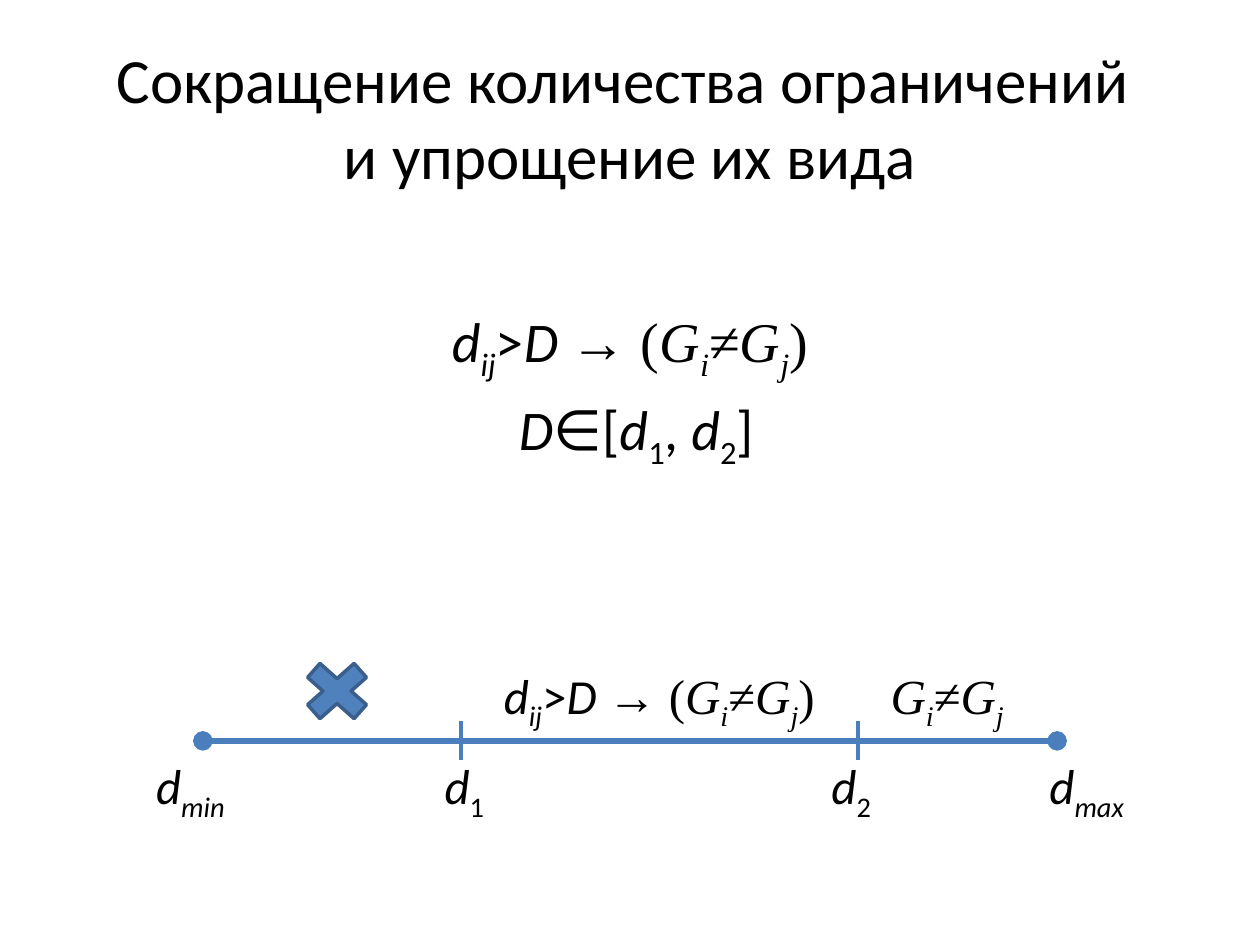
from dataclasses import dataclass

from lxml import etree
from pptx import Presentation
from pptx.dml.color import RGBColor
from pptx.enum import shapes, text
from pptx.oxml import ns
from pptx.util import Pt

BLACK = RGBColor(0x00, 0x00, 0x00)
AXIS_BLUE = RGBColor(0x4B, 0x7E, 0xBC)
CROSS_FILL = RGBColor(0x4F, 0x81, 0xBD)
CROSS_LINE = RGBColor(0x3A, 0x5F, 0x8C)
SANS = "Calibri"
SERIF = "Times New Roman"
AXIS_Y = 423.36
NAME_TOP = 428.4
CONDITION_TOP = 376.56
LABEL_HEIGHT = 41.04


@dataclass(frozen=True)
class Piece:
    content: str
    font: str = SANS
    italic: bool = False
    subscript: bool = False


@dataclass(frozen=True)
class Label:
    left: float
    top: float
    width: float
    pieces: tuple[Piece, ...]


def variable(name: str, index: str, font: str = SANS) -> tuple[Piece, ...]:
    return (
        Piece(name, font, italic=True),
        Piece(index, font, italic=not index.isdigit(), subscript=True),
    )


INEQUALITY = (*variable("G", "i", SERIF), Piece("≠", SERIF), *variable("G", "j", SERIF))
IMPLICATION = (
    *variable("d", "ij"),
    Piece(">"),
    Piece("D ", italic=True),
    Piece("→ (", SERIF),
    *INEQUALITY,
    Piece(")", SERIF),
)
INTERVAL = (
    Piece(" "),
    Piece("D", italic=True),
    Piece("∈["),
    *variable("d", "1"),
    Piece(", "),
    *variable("d", "2"),
    Piece("]"),
)
TICKS = (263.52, 490.32)
LABELS = (
    Label(82.08, NAME_TOP, 73.44, variable("d", "min")),
    Label(592.56, NAME_TOP, 73.44, variable("d", "max")),
    Label(246.96, NAME_TOP, 62.64, variable("d", "1")),
    Label(468, NAME_TOP, 62.64, variable("d", "2")),
    Label(501.84, CONDITION_TOP, 96.48, INEQUALITY),
    Label(280.8, CONDITION_TOP, 203.76, IMPLICATION),
)


def add_pieces(paragraph, pieces: tuple[Piece, ...], size: float) -> None:
    for piece in pieces:
        run = paragraph.add_run()
        run.text = piece.content
        run.font.name = piece.font
        run.font.size = Pt(size)
        run.font.italic = piece.italic
        run.font.color.rgb = BLACK
        if piece.subscript:
            run._r.get_or_add_rPr().set("baseline", "-25000")


def add_frame(slide, left: float, top: float, width: float, height: float):
    frame = slide.shapes.add_textbox(Pt(left), Pt(top), Pt(width), Pt(height)).text_frame
    frame.word_wrap = True
    return frame


def add_title(slide) -> None:
    frame = add_frame(slide, 36, 21.6, 648, 90)
    frame.vertical_anchor = text.MSO_ANCHOR.MIDDLE
    paragraph = frame.paragraphs[0]
    paragraph.alignment = text.PP_ALIGN.CENTER
    add_pieces(paragraph, (Piece("Сокращение количества ограничений "),), 36)
    paragraph.add_line_break()
    add_pieces(paragraph, (Piece("и упрощение их вида"),), 36)


def add_formulas(slide) -> None:
    frame = add_frame(slide, 36, 171.36, 648, 177.84)
    for paragraph, pieces in (
        (frame.paragraphs[0], IMPLICATION),
        (frame.add_paragraph(), INTERVAL),
    ):
        paragraph.alignment = text.PP_ALIGN.CENTER
        paragraph.space_before = Pt(7)
        properties = paragraph._p.get_or_add_pPr()
        properties.set("marL", str(Pt(27)))
        properties.set("indent", str(Pt(-27)))
        add_pieces(paragraph, pieces, 32)


def add_label(slide, label: Label) -> None:
    frame = add_frame(slide, label.left, label.top, label.width, LABEL_HEIGHT)
    frame.auto_size = text.MSO_AUTO_SIZE.SHAPE_TO_FIT_TEXT
    add_pieces(frame.paragraphs[0], label.pieces, 28)


def add_line(slide, start: tuple[float, float], end: tuple[float, float], width: float):
    connector = slide.shapes.add_connector(
        shapes.MSO_CONNECTOR.STRAIGHT, Pt(start[0]), Pt(start[1]), Pt(end[0]), Pt(end[1])
    )
    connector.line.color.rgb = AXIS_BLUE
    connector.line.width = Pt(width)
    etree.SubElement(connector._element.spPr, ns.qn("a:effectLst"))
    return connector


def add_axis(slide) -> None:
    axis = add_line(slide, (115.92, AXIS_Y), (604.08, AXIS_Y), 3.75)
    outline = axis.line._get_or_add_ln()
    for end in ("a:headEnd", "a:tailEnd"):
        etree.SubElement(outline, ns.qn(end)).set("type", "oval")
    for x in TICKS:
        add_line(slide, (x, AXIS_Y - 11.2), (x, AXIS_Y + 11.2), 2.5)


def add_cross(slide) -> None:
    cross = slide.shapes.add_shape(
        shapes.MSO_SHAPE.MATH_MULTIPLY, Pt(167.04), Pt(372.24), Pt(51.12), Pt(45.36)
    )
    cross.shadow.inherit = False
    cross.fill.solid()
    cross.fill.fore_color.rgb = CROSS_FILL
    cross.line.color.rgb = CROSS_LINE
    cross.line.width = Pt(2)


def main() -> None:
    presentation = Presentation()
    presentation.slide_width = Pt(720)
    presentation.slide_height = Pt(540)
    slide = presentation.slides.add_slide(presentation.slide_layouts[6])
    add_title(slide)
    add_formulas(slide)
    add_axis(slide)
    add_cross(slide)
    for label in LABELS:
        add_label(slide, label)
    presentation.save("out.pptx")


if __name__ == "__main__":
    main()
